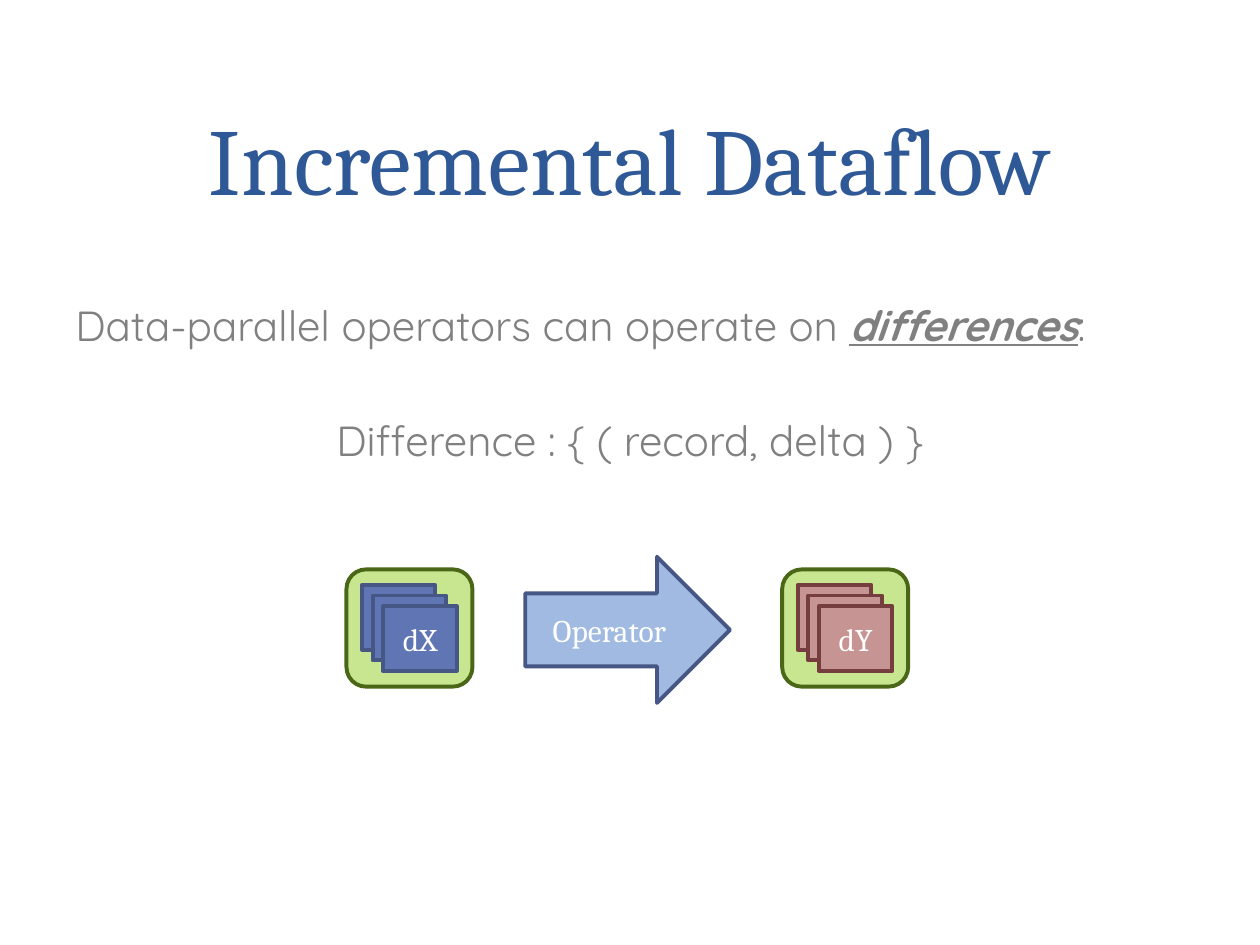
from pptx import Presentation
from pptx.dml.color import RGBColor
from pptx.enum.shapes import MSO_SHAPE
from pptx.enum.text import MSO_ANCHOR, PP_ALIGN
from pptx.util import Pt

TITLE_BLUE = RGBColor(0x2F, 0x58, 0x97)
GREY = RGBColor(0x80, 0x80, 0x80)
WHITE = RGBColor(0xFF, 0xFF, 0xFF)
GREEN = RGBColor(0xC7, 0xE6, 0x8F)
DARK_GREEN = RGBColor(0x4A, 0x67, 0x17)
SKY = RGBColor(0xA0, 0xBA, 0xE1)
BLUE = RGBColor(0x60, 0x76, 0xB4)
NAVY = RGBColor(0x47, 0x57, 0x85)
ROSE = RGBColor(0xC7, 0x94, 0x94)
MAROON = RGBColor(0x75, 0x3D, 0x3D)

TITLE = {"name": "Cambria", "size": Pt(54), "color": TITLE_BLUE}
BODY = {"name": "Quicksand", "size": Pt(24), "color": GREY}
EMPHASIS = BODY | {"bold": True, "italic": True, "underline": True}
LABEL = {"name": "Cambria", "size": Pt(18), "color": WHITE}


def add_span(para, text, style):
    span = para.add_run()
    span.text = text
    for key, value in style.items():
        if key == "color":
            span.font.color.rgb = value
        else:
            setattr(span.font, key, value)


def set_title(page, text):
    title = page.shapes.title
    title.left, title.top, title.width, title.height = Pt(36), Pt(0), Pt(648), Pt(126)
    title.text_frame.vertical_anchor = MSO_ANCHOR.BOTTOM
    para = title.text_frame.paragraphs[0]
    para.alignment = PP_ALIGN.CENTER
    para.line_spacing = Pt(58)
    add_span(para, text, TITLE)


def add_body(page):
    frame = page.shapes.add_textbox(Pt(36), Pt(133.2), Pt(648), Pt(356.4)).text_frame
    frame.word_wrap = True
    frame.margin_top = Pt(37.7)
    claim = frame.paragraphs[0]
    add_span(claim, "Data-parallel operators can operate on ", BODY)
    add_span(claim, "differences", EMPHASIS)
    add_span(claim, ":", BODY)
    definition = frame.add_paragraph()
    definition.alignment = PP_ALIGN.CENTER
    definition.space_before = Pt(37)
    add_span(definition, "Difference : { ( record, delta ) }", BODY)


def add_block(shapes, kind, bounds, fill, line, label=None):
    block = shapes.add_shape(kind, *map(Pt, bounds))
    block.shadow.inherit = False
    block.fill.solid()
    block.fill.fore_color.rgb = fill
    block.line.color.rgb = line
    block.line.width = Pt(2.25)
    if label:
        frame = block.text_frame
        frame.word_wrap = False
        frame.vertical_anchor = MSO_ANCHOR.MIDDLE
        frame.paragraphs[0].alignment = PP_ALIGN.CENTER
        add_span(frame.paragraphs[0], label, LABEL)


def add_collection(page, left, fill, line, label):
    """Rounded case holding three stacked tiles, the front one labelled."""
    top = 325.4
    add_block(page.shapes, MSO_SHAPE.ROUNDED_RECTANGLE, (left, top, 72, 67), GREEN, DARK_GREEN)
    stack = page.shapes.add_group_shape()
    for index, text in enumerate((None, None, label)):
        shift = 8.8 + 6.1 * index
        bounds = (left + shift, top + shift, 42, 37)
        add_block(stack.shapes, MSO_SHAPE.RECTANGLE, bounds, fill, line, text)


def main():
    deck = Presentation()
    deck.slide_width, deck.slide_height = Pt(720), Pt(540)
    page = deck.slides.add_slide(deck.slide_layouts[5])
    set_title(page, "Incremental Dataflow")
    add_body(page)
    add_collection(page, 198, BLUE, NAVY, "dX")
    add_block(page.shapes, MSO_SHAPE.RIGHT_ARROW, (300.2, 318.2, 117, 83.5), SKY, NAVY, "Operator")
    add_collection(page, 447, ROSE, MAROON, "dY")
    deck.save("out.pptx")


if __name__ == "__main__":
    main()
